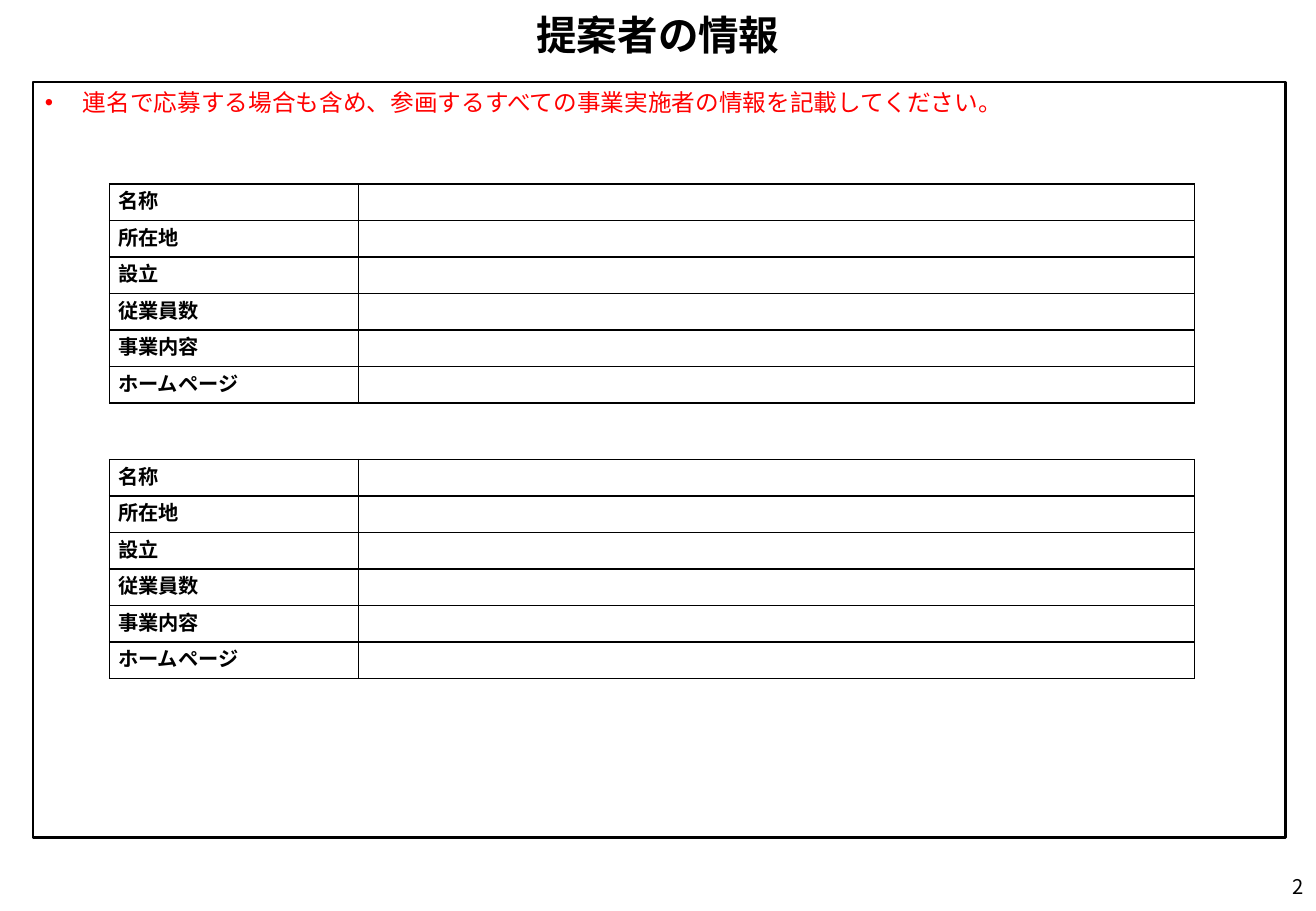
from lxml import etree
from pptx import Presentation
from pptx.dml.color import RGBColor
from pptx.enum.shapes import MSO_SHAPE
from pptx.enum.text import MSO_ANCHOR, MSO_AUTO_SIZE, PP_ALIGN
from pptx.oxml.ns import qn
from pptx.util import Cm, Pt

RECTANGLE = MSO_SHAPE.RECTANGLE
TOP, MIDDLE = MSO_ANCHOR.TOP, MSO_ANCHOR.MIDDLE
NO_AUTOFIT = MSO_AUTO_SIZE.NONE
LEFT, CENTER, RIGHT, JUSTIFY = PP_ALIGN.LEFT, PP_ALIGN.CENTER, PP_ALIGN.RIGHT, PP_ALIGN.JUSTIFY

FONT = "Noto Sans CJK JP"
BLACK, WHITE, RED = "000000", "FFFFFF", "FF0000"
SLIDE_WIDTH, SLIDE_HEIGHT = 27.51, 19.05
TITLE_ONLY_LAYOUT = 5
PROFILE_LABELS = ["名称", "所在地", "設立", "従業員数", "事業内容", "ホームページ"]
LABEL_WIDTH = 5.21
ROW_HEIGHT = 0.635


def color(hex_code):
    return RGBColor.from_string(hex_code)


def write_text(frame, text, size=12, hex_code=BLACK, bold=False, align=LEFT,
               anchor=MIDDLE, spacing=None, hanging=0, bullet=None):
    """Fill the first paragraph of a text frame; hanging is in centimetres."""
    frame.word_wrap = True
    frame.vertical_anchor = anchor
    paragraph = frame.paragraphs[0]
    paragraph.alignment = align
    paragraph.line_spacing = spacing
    properties = paragraph._p.get_or_add_pPr()
    if hanging:
        properties.set("marL", str(Cm(hanging)))
        properties.set("indent", str(-Cm(hanging)))
    if bullet:
        etree.SubElement(properties, qn("a:buFont"), typeface="Arial")
        etree.SubElement(properties, qn("a:buChar"), char=bullet)
    run = paragraph.add_run()
    run.text = text
    run.font.name = FONT
    run.font.size = Pt(size)
    run.font.bold = bold
    run.font.color.rgb = color(hex_code)
    etree.SubElement(run._r.get_or_add_rPr(), qn("a:ea"), typeface=FONT)


def add_title(slide, left, top, width, height):
    title = slide.shapes.title
    title.left, title.top, title.width, title.height = map(Cm, (left, top, width, height))
    title.text_frame.auto_size = NO_AUTOFIT
    write_text(title.text_frame, "提案者の情報", size=24, bold=True, align=CENTER, spacing=0.9)


def add_instruction_frame(slide, left, top, width, height):
    shape = slide.shapes.add_shape(RECTANGLE, Cm(left), Cm(top), Cm(width), Cm(height))
    shape.shadow.inherit = False
    shape.fill.solid()
    shape.fill.fore_color.rgb = color(WHITE)
    shape.line.color.rgb = color(BLACK)
    shape.line.width = Pt(1.5)
    write_text(shape.text_frame, "連名で応募する場合も含め、参画するすべての事業実施者の情報を記載してください。",
               size=14, hex_code=RED, anchor=TOP, hanging=0.79, bullet="•")


def style_cell(cell):
    cell.margin_left = cell.margin_right = Cm(0.18)
    cell.margin_top = cell.margin_bottom = 0
    properties = cell._tc.get_or_add_tcPr()
    for edge in ("a:lnL", "a:lnR", "a:lnT", "a:lnB"):
        line = etree.SubElement(properties, qn(edge), w=str(Pt(1)))
        fill = etree.SubElement(line, qn("a:solidFill"))
        etree.SubElement(fill, qn("a:srgbClr"), val=BLACK)
    cell.fill.solid()
    cell.fill.fore_color.rgb = color(WHITE)


def add_profile_table(slide, left, top, width):
    """Add a form with one labelled row per item and a blank answer column."""
    row_count = len(PROFILE_LABELS)
    table = slide.shapes.add_table(row_count, 2, Cm(left), Cm(top), Cm(width),
                                   Cm(ROW_HEIGHT * row_count)).table
    table.first_row = table.horz_banding = False
    table.columns[0].width = Cm(LABEL_WIDTH)
    table.columns[1].width = Cm(width - LABEL_WIDTH)
    for row, label in zip(table.rows, PROFILE_LABELS):
        row.height = Cm(ROW_HEIGHT)
        for cell, text in zip(row.cells, (label, "")):
            style_cell(cell)
            write_text(cell.text_frame, text, bold=True, align=JUSTIFY, anchor=TOP,
                       spacing=Pt(18), hanging=0.38)


def add_page_number(slide, left, top, width, height):
    box = slide.shapes.add_textbox(Cm(left), Cm(top), Cm(width), Cm(height))
    write_text(box.text_frame, "2", align=RIGHT)


def main():
    presentation = Presentation()
    presentation.slide_width = Cm(SLIDE_WIDTH)
    presentation.slide_height = Cm(SLIDE_HEIGHT)
    slide = presentation.slides.add_slide(presentation.slide_layouts[TITLE_ONLY_LAYOUT])
    add_instruction_frame(slide, 0.69, 1.72, 26.19, 15.8)
    add_title(slide, 0, 0, SLIDE_WIDTH, 1.55)
    add_page_number(slide, SLIDE_WIDTH - 6.2, SLIDE_HEIGHT - 1.02, 6.2, 1.02)
    for top in (3.85, 9.61):
        add_profile_table(slide, 2.29, top, 22.68)
    presentation.save("out.pptx")


if __name__ == "__main__":
    main()
